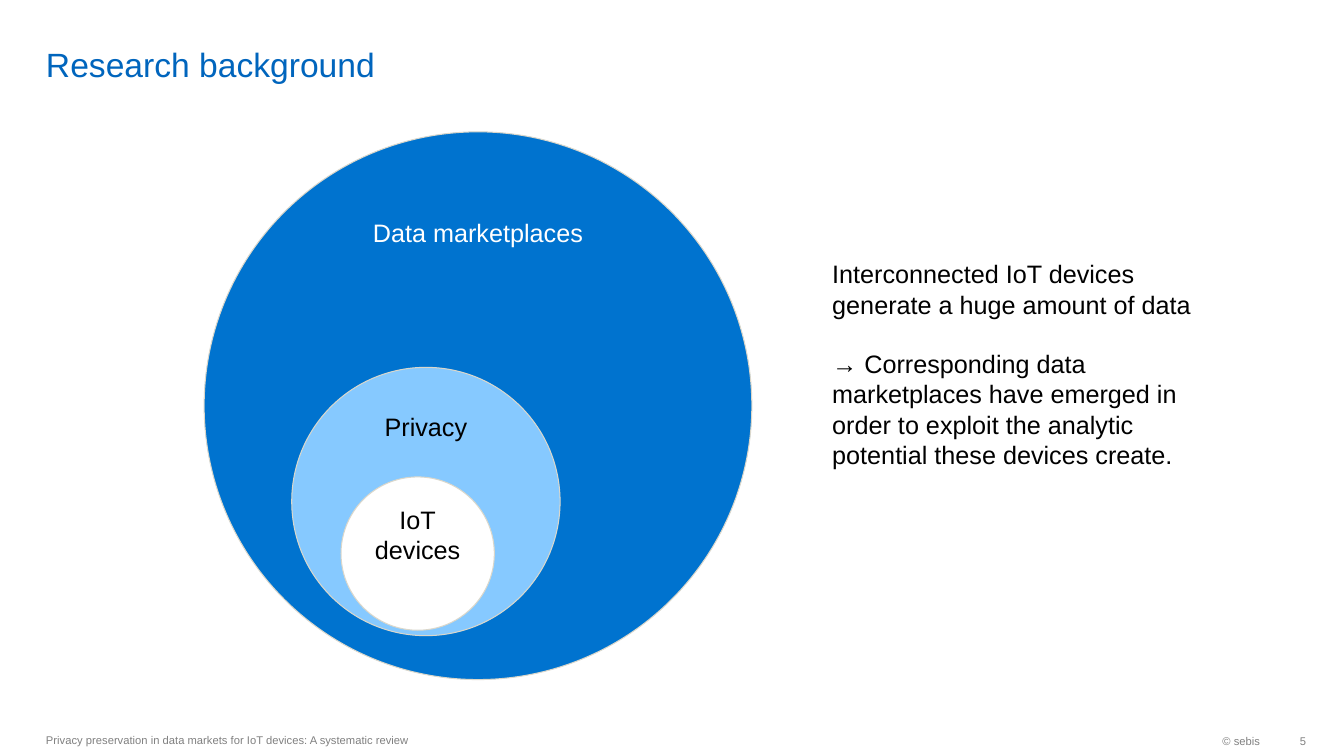
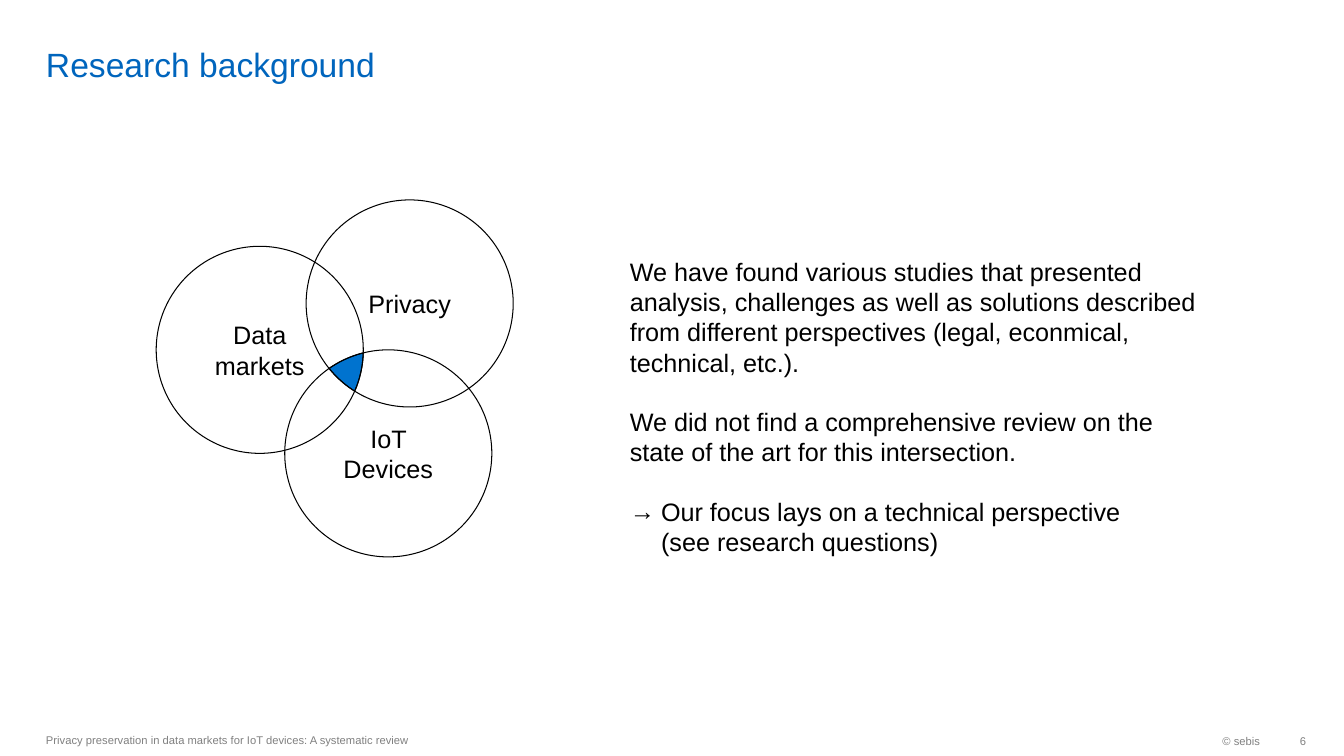
from collections import namedtuple
from math import atan2, cos, hypot, pi, sin

from lxml.etree import SubElement
from pptx import Presentation
from pptx.dml.color import RGBColor
from pptx.enum.shapes import MSO_SHAPE as Preset
from pptx.enum.text import MSO_ANCHOR as Anchor, PP_ALIGN as Align
from pptx.oxml.ns import qn
from pptx.util import Inches, Pt

COLORS = {
    "title": "0065BD",
    "footer": "808080",
    "outer": "0073CF",
    "middle": "86C9FF",
    "edge": "DAD7CB",
    "white": "FFFFFF",
    "black": "000000",
}
FONT = "Arial"
CELL = Inches(1 / 12)
COLUMNS, ROWS = 160, 90
BODY_GAP = Pt(21)
ARROW_INDENT = Inches(0.31)
ARC_STEPS = 720

Box = namedtuple("Box", "left top width height")


def cells(left, top, width, height):
    """Turn grid columns and rows into a box on the slide."""
    return Box(*(round(CELL * count) for count in (left, top, width, height)))


def circle_box(box, left, top, size):
    """Give the square box of a circle from shares of a square region."""
    side = round(box.width * size)
    return Box(box.left + round(box.width * left), box.top + round(box.height * top), side, side)


def set_format(target, values):
    """Set every attribute named in a dict of format values."""
    for name, value in values.items():
        setattr(target, name, value)


def write(frame, paragraphs, size=18, color="black", align=Align.LEFT, gap=0, **frame_format):
    """Fill a text frame with evenly spaced paragraphs in one style."""
    set_format(frame, {"word_wrap": True, **frame_format})
    for index, text in enumerate(paragraphs):
        para = frame.paragraphs[0] if index == 0 else frame.add_paragraph()
        para.text = text
        set_format(para, {"alignment": align, "space_before": gap if index else 0})
        for span in para.runs:
            set_format(span.font, {"name": FONT, "size": Pt(size)})
            span.font.color.rgb = RGBColor.from_string(COLORS[color])


def add_text(page, box, paragraphs, **text_format):
    """Place a text box and return its frame."""
    frame = page.shapes.add_textbox(*box).text_frame
    write(frame, paragraphs, **text_format)
    return frame


def style_shape(shape, fill, line):
    """Give a shape a flat fill, or none, and a thin line."""
    shape.shadow.inherit = False
    if fill:
        shape.fill.solid()
        shape.fill.fore_color.rgb = RGBColor.from_string(COLORS[fill])
    else:
        shape.fill.background()
    shape.line.color.rgb = RGBColor.from_string(COLORS[line])
    shape.line.width = Pt(0.75)


def add_circle(shapes, box, lines, fill, line, color, anchor):
    """Draw a labelled circle."""
    circle = shapes.add_shape(Preset.OVAL, *box)
    style_shape(circle, fill, line)
    write(circle.text_frame, lines, color=color, align=Align.CENTER, vertical_anchor=anchor)


def add_frame(deck, title, number):
    """Start a page with the shared title and footer."""
    page = deck.slides.add_slide(deck.slide_layouts[6])
    add_text(page, cells(4.3, 0.5, 139, 9.5), [title], size=24, color="title",
             vertical_anchor=Anchor.BOTTOM, margin_top=0, margin_bottom=0)
    footer = {"size": 8, "color": "footer", "vertical_anchor": Anchor.MIDDLE}
    add_text(page, cells(4.3, 86.2, 75.6, 3.8),
             ["Privacy preservation in data markets for IoT devices: A systematic review"], **footer)
    add_text(page, cells(123.1, 86.3, 28.1, 3.8), ["© sebis"], align=Align.RIGHT, **footer)
    add_text(page, cells(151.2, 86.3, 4.3, 3.8), [str(number)], align=Align.RIGHT,
             margin_right=0, **footer)
    return page


def add_nested_circles(page, box):
    """Draw the topics as circles inside each other."""
    rings = [
        (0, 0, 1, ["Data marketplaces"], "outer", "white"),
        (0.16, 0.43, 0.49, ["Privacy"], "middle", "black"),
        (0.25, 0.63, 0.28, ["IoT", "devices"], "white", "black"),
    ]
    for left, top, size, lines, fill, color in rings:
        add_circle(page.shapes, circle_box(box, left, top, size), lines,
                   fill, "edge", color, Anchor.TOP)


def shared_outline(circles):
    """List the edge points of the area common to all circles, in order."""
    discs = [(c.left + c.width / 2, c.top + c.height / 2, c.width / 2) for c in circles]
    points = []
    for disc in discs:
        others = [other for other in discs if other != disc]
        for step in range(ARC_STEPS):
            angle = 2 * pi * step / ARC_STEPS
            x, y = disc[0] + disc[2] * cos(angle), disc[1] + disc[2] * sin(angle)
            if all(hypot(x - cx, y - cy) <= radius for cx, cy, radius in others):
                points.append((round(x), round(y)))
    middle_x, middle_y = (sum(values) / len(points) for values in zip(*points))
    return sorted(points, key=lambda point: atan2(point[1] - middle_y, point[0] - middle_x))


def add_venn(page, box):
    """Draw three overlapping topics and fill what they share."""
    labels = {"Data markets": (0, 0.13), "Privacy": (0.42, 0), "IoT Devices": (0.36, 0.42)}
    circles = {label: circle_box(box, *place, 0.58) for label, place in labels.items()}
    group = page.shapes.add_group_shape()
    start, *rest = shared_outline(list(circles.values()))
    outline = group.shapes.build_freeform(*start, scale=1.0)
    outline.add_line_segments(rest, close=True)
    style_shape(outline.convert_to_shape(), "outer", "black")
    for label, place in circles.items():
        add_circle(group.shapes, place, [label], None, "black", "black", Anchor.MIDDLE)


def add_arrow_bullet(para):
    """Give a paragraph a hanging arrow bullet."""
    props = para._p.get_or_add_pPr()
    props.set("marL", str(ARROW_INDENT))
    props.set("indent", str(-ARROW_INDENT))
    SubElement(props, qn("a:buFont")).set("typeface", FONT)
    SubElement(props, qn("a:buChar")).set("char", "→")


def build_nested_page(deck, number):
    """Build the page on how the topics contain each other."""
    page = add_frame(deck, "Research background", number)
    add_nested_circles(page, cells(24.3, 15.7, 65.2, 65.2))
    add_text(page, cells(97.9, 30.2, 45.4, 26.6), [
        "Interconnected IoT devices generate a huge amount of data",
        "→ Corresponding data marketplaces have emerged in order to exploit "
        "the analytic potential these devices create.",
    ], gap=BODY_GAP)


def build_overlap_page(deck, number):
    """Build the page on where the topics overlap."""
    page = add_frame(deck, "Research background", number)
    add_venn(page, cells(18.6, 23.8, 42.5, 42.5))
    frame = add_text(page, cells(73.8, 29.9, 70, 37.6), [
        "We have found various studies that presented analysis, challenges as well as "
        "solutions described from different perspectives (legal, econmical, technical, etc.).",
        "We did not find a comprehensive review on the state of the art for this intersection.",
        "Our focus lays on a technical perspective\v(see research questions)",
    ], gap=BODY_GAP)
    add_arrow_bullet(frame.paragraphs[-1])


def main():
    """Build and save the deck."""
    deck = Presentation()
    set_format(deck, {"slide_width": CELL * COLUMNS, "slide_height": CELL * ROWS})
    for number, build in enumerate((build_nested_page, build_overlap_page), start=5):
        build(deck, number)
    deck.save("out.pptx")


if __name__ == "__main__":
    main()
